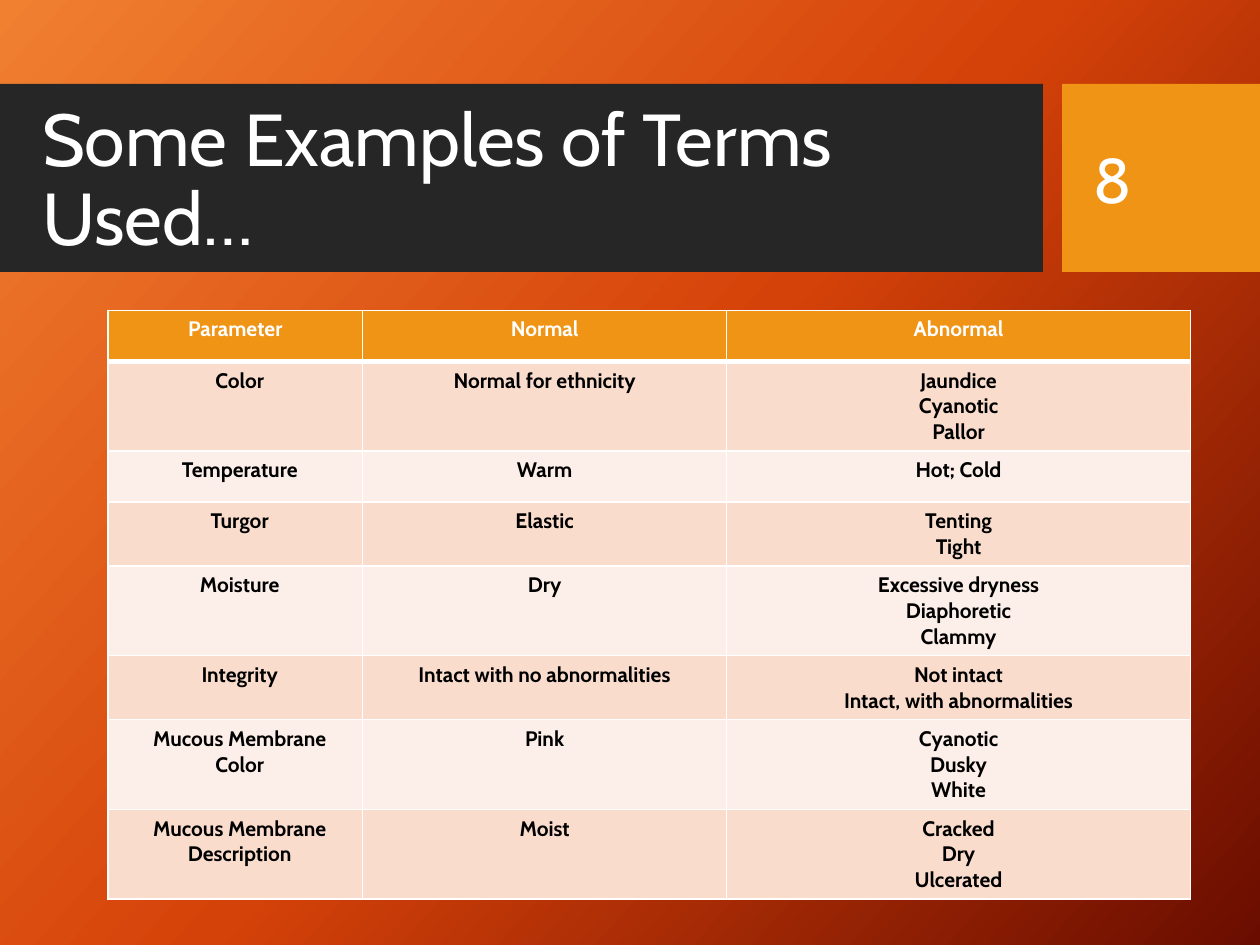
from copy import deepcopy

from lxml.etree import SubElement
from pptx import Presentation
from pptx.dml.color import RGBColor
from pptx.enum.shapes import MSO_SHAPE
from pptx.enum.text import MSO_ANCHOR, MSO_AUTO_SIZE, PP_ALIGN
from pptx.oxml.ns import qn
from pptx.util import Pt

WHITE = RGBColor(0xFF, 0xFF, 0xFF)
BLACK = RGBColor(0x00, 0x00, 0x00)
CHARCOAL = RGBColor(0x26, 0x26, 0x26)
ORANGE = RGBColor(0xF0, 0x94, 0x15)
PEACH = RGBColor(0xF9, 0xDC, 0xCC)
PALE_PEACH = RGBColor(0xFC, 0xEE, 0xE8)
GRADIENT = [
    (0, RGBColor(0xF1, 0x80, 0x31)),
    (0.5, RGBColor(0xD5, 0x42, 0x09)),
    (1, RGBColor(0x6A, 0x0D, 0x00)),
]

TITLE_FONT = {"name": "Cabin", "size": Pt(42), "bold": False}
NUMBER_FONT = {"name": "Cabin", "size": Pt(36), "bold": False}
TABLE_FONT = {"name": "Cabin", "size": Pt(12), "bold": True}

COLUMN_WIDTHS = [145.4, 208.1, 265]
ROW_HEIGHTS = {1: 29.2, 2: 36.6, 3: 51.2}
TERMS = [
    ("Parameter", "Normal", "Abnormal"),
    ("Color", "Normal for ethnicity", "Jaundice\nCyanotic\nPallor"),
    ("Temperature", "Warm", "Hot; Cold"),
    ("Turgor", "Elastic", "Tenting\nTight"),
    ("Moisture", "Dry", "Excessive dryness\nDiaphoretic\nClammy"),
    ("Integrity", "Intact with no abnormalities", "Not intact\nIntact, with abnormalities"),
    ("Mucous Membrane Color", "Pink", "Cyanotic\nDusky\nWhite"),
    ("Mucous Membrane Description", "Moist", "Cracked\nDry\nUlcerated"),
]


def format_font(font, values, color):
    """Apply a dict of font values and a colour."""
    for name, value in values.items():
        setattr(font, name, value)
    font.color.rgb = color


def paint_background(page):
    """Fill the page with the diagonal three-stop gradient."""
    fill = page.background.fill
    fill.gradient()
    fill.gradient_angle = 318
    stop_list = page.element.xpath(".//a:gsLst")[0]
    stop_list.append(deepcopy(stop_list[-1]))
    for stop, (position, color) in zip(fill.gradient_stops, GRADIENT):
        stop.position = position
        stop.color.rgb = color


def add_band(page, left, top, width, height, color):
    """Draw one plain filled rectangle."""
    band = page.shapes.add_shape(
        MSO_SHAPE.RECTANGLE, Pt(left), Pt(top), Pt(width), Pt(height))
    band.shadow.inherit = False
    band.fill.solid()
    band.fill.fore_color.rgb = color
    band.line.fill.background()


def fill_heading_box(box, left, top, width, height, text, font_values):
    """Place a heading text box and write its white text."""
    box.left, box.top, box.width, box.height = Pt(left), Pt(top), Pt(width), Pt(height)
    frame = box.text_frame
    frame.word_wrap = True
    frame.auto_size = MSO_AUTO_SIZE.NONE
    frame.vertical_anchor = MSO_ANCHOR.MIDDLE
    frame.text = text
    paragraph = frame.paragraphs[0]
    paragraph.alignment = PP_ALIGN.LEFT
    format_font(paragraph.runs[0].font, font_values, WHITE)


def add_header(page, left, top, width, height):
    """Build the title band and the page number block across the given box."""
    number_width = 113
    number_left = left + width - number_width
    add_band(page, left, top, 596, height, CHARCOAL)
    add_band(page, number_left, top, number_width, height, ORANGE)
    title = page.shapes.title
    title.element.getparent().append(title.element)
    fill_heading_box(title, left + 16.8, top + 11, 569.5, 90,
                     "Some Examples of Terms Used…", TITLE_FONT)
    title.text_frame.paragraphs[0].line_spacing = 0.9
    number = page.shapes.add_textbox(0, 0, 0, 0)
    fill_heading_box(number, number_left + 11, top + 11, 91.4, 85.7, "8", NUMBER_FONT)


def add_borders(cell, bottom_width):
    """Give a cell white borders, with its own bottom width."""
    properties = cell._tc.get_or_add_tcPr()
    for side, width in {"L": 1, "R": 1, "T": 1, "B": bottom_width}.items():
        line = SubElement(properties, qn(f"a:ln{side}"), w=str(Pt(width)))
        solid = SubElement(line, qn("a:solidFill"))
        SubElement(solid, qn("a:srgbClr"), val=str(WHITE))


def fill_cell(cell, text, fill_color, text_color, bottom_width, indent):
    """Write centred lines into a bordered, filled cell."""
    add_borders(cell, bottom_width)
    cell.fill.solid()
    cell.fill.fore_color.rgb = fill_color
    cell.text = text
    for paragraph in cell.text_frame.paragraphs:
        paragraph.alignment = PP_ALIGN.CENTER
        paragraph._p.get_or_add_pPr().set("marL", str(Pt(indent)))
        for span in paragraph.runs:
            format_font(span.font, TABLE_FONT, text_color)


def add_terms_table(page, left, top, width):
    """Build the table of normal and abnormal terms."""
    heights = [ROW_HEIGHTS[row[2].count("\n") + 1] for row in TERMS]
    table = page.shapes.add_table(
        len(TERMS), len(COLUMN_WIDTHS), Pt(left), Pt(top), Pt(width), Pt(sum(heights))).table
    for column, column_width in zip(table.columns, COLUMN_WIDTHS):
        column.width = Pt(column_width)
    for row_index, row in enumerate(TERMS):
        table.rows[row_index].height = Pt(heights[row_index])
        is_header = row_index == 0
        band_color = PEACH if row_index % 2 else PALE_PEACH
        for column_index, text in enumerate(row):
            fill_cell(
                table.cell(row_index, column_index), text,
                fill_color=ORANGE if is_header else band_color,
                text_color=WHITE if is_header else BLACK,
                bottom_width=3 if is_header else 1,
                indent=5 if column_index == 0 and not is_header else 0)


def main():
    """Create the deck and save it."""
    deck = Presentation()
    deck.slide_width, deck.slide_height = Pt(720), Pt(540)
    page = deck.slides.add_slide(deck.slide_layouts[5])
    paint_background(page)
    add_header(page, 0, 48, 720, 107.5)
    add_terms_table(page, 61.8, 177.3, sum(COLUMN_WIDTHS))
    deck.save("out.pptx")


if __name__ == "__main__":
    main()
